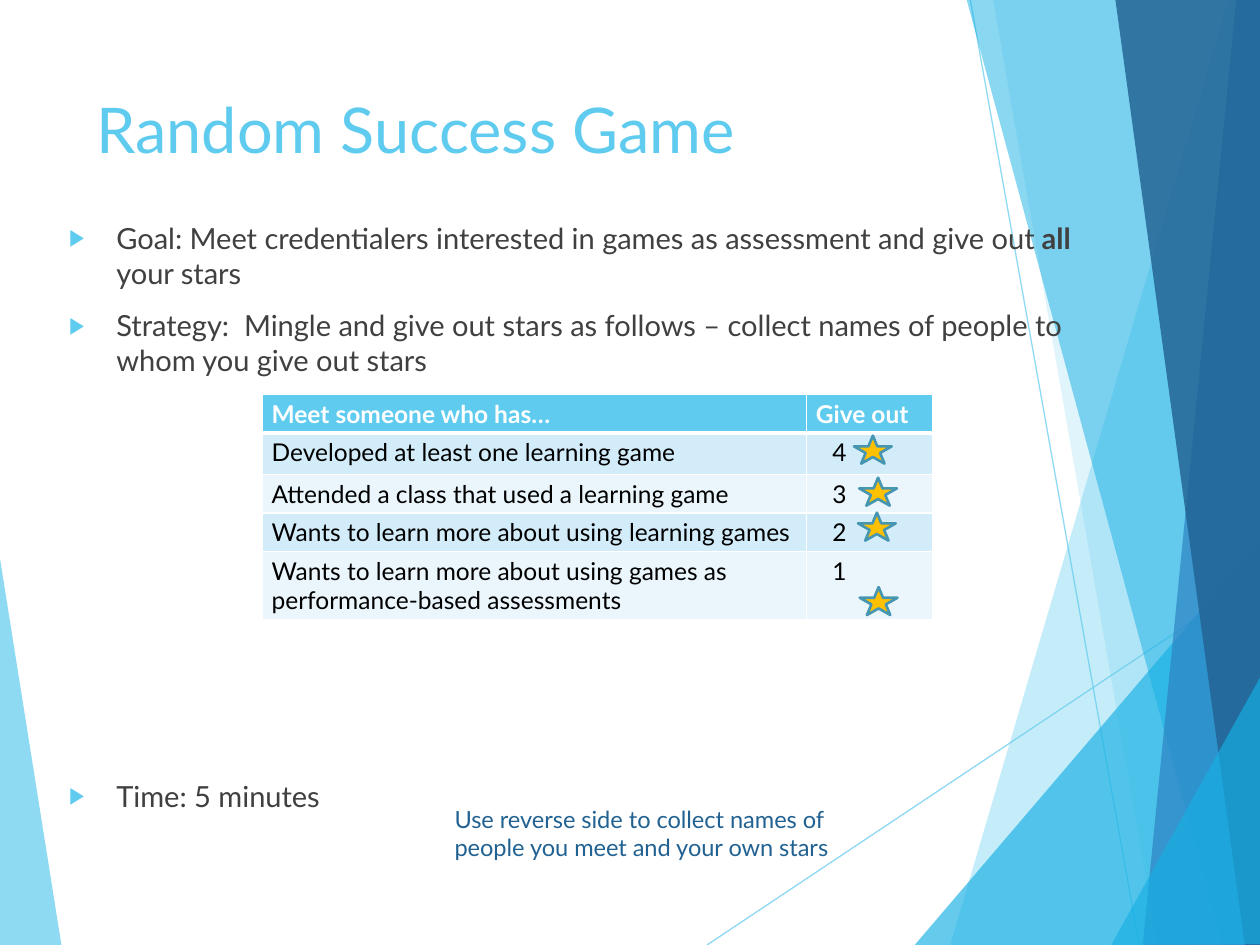
from lxml import etree
from pptx import Presentation
from pptx.dml.color import RGBColor
from pptx.enum import shapes, text
from pptx.oxml import parse_xml
from pptx.oxml.ns import nsdecls, qn
from pptx.util import Pt

C = {"sky": "5FCBEF", "cyan": "17B0E4", "blue": "2E83C3", "navy": "226292",
     "grey": "404040", "black": "000000", "white": "FFFFFF", "band": "D2ECF9",
     "pale": "EAF6FC", "gold": "FFC000", "edge": "4696B1"}
FONT = "Lato"


def style(r, size, color, bold=False):
    r.font.name, r.font.size, r.font.bold = FONT, Pt(size), bold
    r.font.color.rgb = RGBColor.from_string(C[color])


def set_alpha(shape, percent):
    """Make the shape's fill or line colour partly transparent."""
    clr = next(shape._element.spPr.iter(qn("a:srgbClr")))
    etree.SubElement(clr, qn("a:alpha")).set("val", str(percent * 1000))


prs = Presentation()
prs.slide_width, prs.slide_height = Pt(720), Pt(540)
s = prs.slides.add_slide(prs.slide_layouts[5])

# Background lines and facets, from back to front
for x1, y1, x2, y2 in [(404, 540, 720.5, 329), (554.5, 0, 651, 540)]:
    line = s.shapes.add_connector(shapes.MSO_CONNECTOR.STRAIGHT,
                                  Pt(x1), Pt(y1), Pt(x2), Pt(y2))
    line.line.color.rgb = RGBColor.from_string(C["sky"])
    line.line.width = Pt(0.75)
    set_alpha(line, 70)
    etree.SubElement(line._element.spPr, qn("a:effectLst"))

facets = [
    ("sky", 70, [(-0.5, 316), (35.2, 540.5), (-0.5, 540)]),
    ("sky", 36, [(702, 0), (543, 540), (721, 540.5), (721, 0.5)]),
    ("sky", 20, [(567.5, -0.5), (661.5, 540), (720.5, 540), (720.5, -0.5)]),
    ("cyan", 66, [(522.7, 540), (720, 309), (720.5, 540)]),
    ("cyan", 50, [(552.3, -0.5), (698.5, 540), (720.5, 539.5), (720.5, -0.5)]),
    ("blue", 70, [(706.5, -0.5), (653, 540), (720.5, 540), (720, -0.5)]),
    ("navy", 82, [(637.3, -0.5), (711.3, 540), (721, 540), (720, -0.5)]),
    ("cyan", 66, [(635, 540), (721, 385.5), (721, 539.5)]),
]
for color, alpha, points in facets:
    start, *rest = [(Pt(x), Pt(y)) for x, y in points]
    fb = s.shapes.build_freeform(*start)
    fb.add_line_segments(rest, close=True)
    facet = fb.convert_to_shape()
    facet.shadow.inherit = False
    facet.fill.solid()
    facet.fill.fore_color.rgb = RGBColor.from_string(C[color])
    facet.line.fill.background()
    set_alpha(facet, alpha)

# Title
title = s.shapes.title
title.left, title.top, title.width, title.height = Pt(48), Pt(48), Pt(500), Pt(104)
tf = title.text_frame
tf.text = "Random Success Game"
tf.vertical_anchor = text.MSO_ANCHOR.TOP
tf.paragraphs[0].alignment = text.PP_ALIGN.LEFT
style(tf.paragraphs[0].runs[0], 36, "sky")

# Instructions; the wide gap before the last one leaves room for the table
tf = s.shapes.add_textbox(Pt(32.4), Pt(122.4), Pt(615.6), Pt(307.4)).text_frame
tf.word_wrap = True
instructions = [
    (10, ["Goal: Meet credentialers interested in games as assessment and give out ",
          "all ", "your stars"]),
    (10, ["Strategy:  Mingle and give out stars as follows – collect names of people "
          "to whom you give out stars"]),
    (229, ["Time: 5 minutes"]),
]
for i, (gap, parts) in enumerate(instructions):
    p = tf.add_paragraph() if i else tf.paragraphs[0]
    p.space_before = Pt(gap)
    for part in parts:
        r = p.add_run()
        r.text = part
        style(r, 16.6, "grey", part == "all ")
    pPr = p._p.get_or_add_pPr()
    pPr.set("marL", str(Pt(27)))
    pPr.set("indent", str(-Pt(27)))
    for xml in (f'<a:buClr {nsdecls("a")}><a:srgbClr val="{C["sky"]}"/></a:buClr>',
                f'<a:buSzPct {nsdecls("a")} val="80000"/>',
                f'<a:buFont {nsdecls("a")} typeface="Arial"/>',
                f'<a:buChar {nsdecls("a")} char="▶"/>'):
        pPr.append(parse_xml(xml))

# Table of stars to give out
rows = [("Meet someone who has…", "Give out"),
        ("Developed at least one learning game", "4"),
        ("Attended a class that used a learning game", "3"),
        ("Wants to learn more about using learning games", "2"),
        ("Wants to learn more about using games as performance-based assessments", "1")]
heights = [21.6, 23.8, 21.6, 21.6, 38.2]
table = s.shapes.add_table(len(rows), 2, Pt(150), Pt(225.5), Pt(383),
                           Pt(sum(heights))).table
table.columns[0].width, table.columns[1].width = Pt(311), Pt(72)
for i, row in enumerate(rows):
    table.rows[i].height = Pt(heights[i])
    for j, words in enumerate(row):
        cell = table.cell(i, j)
        cell.text = words
        cell.margin_left = Pt(14.6 if i and j else 5.2)
        cell.margin_right = Pt(5.2)
        cell.margin_top = cell.margin_bottom = Pt(2.6)
        style(cell.text_frame.paragraphs[0].runs[0], 14,
              "black" if i else "white", i == 0)
        tcPr = cell._tc.get_or_add_tcPr()
        for side in "LRTB":
            thick = (i, side) in [(0, "B"), (1, "T")]
            tcPr.append(parse_xml(
                f'<a:ln{side} {nsdecls("a")} w="{Pt(3 if thick else 1)}"><a:solidFill>'
                f'<a:srgbClr val="{C["white"]}"/></a:solidFill></a:ln{side}>'))
        cell.fill.solid()
        fill = "sky" if i == 0 else "band" if i % 2 else "pale"
        cell.fill.fore_color.rgb = RGBColor.from_string(C[fill])

for x, y in [(488, 249), (491, 273), (490.3, 293), (491.3, 335.5)]:
    star = s.shapes.add_shape(shapes.MSO_SHAPE.STAR_5_POINT,
                              Pt(x), Pt(y), Pt(21.6), Pt(16))
    star.shadow.inherit = False
    star.fill.solid()
    star.fill.fore_color.rgb = RGBColor.from_string(C["gold"])
    star.line.color.rgb = RGBColor.from_string(C["edge"])
    star.line.width = Pt(1.5)

# Note at the foot
tf = s.shapes.add_textbox(Pt(252.7), Pt(456.5), Pt(260), Pt(40.3)).text_frame
tf.word_wrap = True
tf.text = "Use reverse side to collect names of people you meet and your own stars"
style(tf.paragraphs[0].runs[0], 13.5, "navy")

prs.save("out.pptx")
